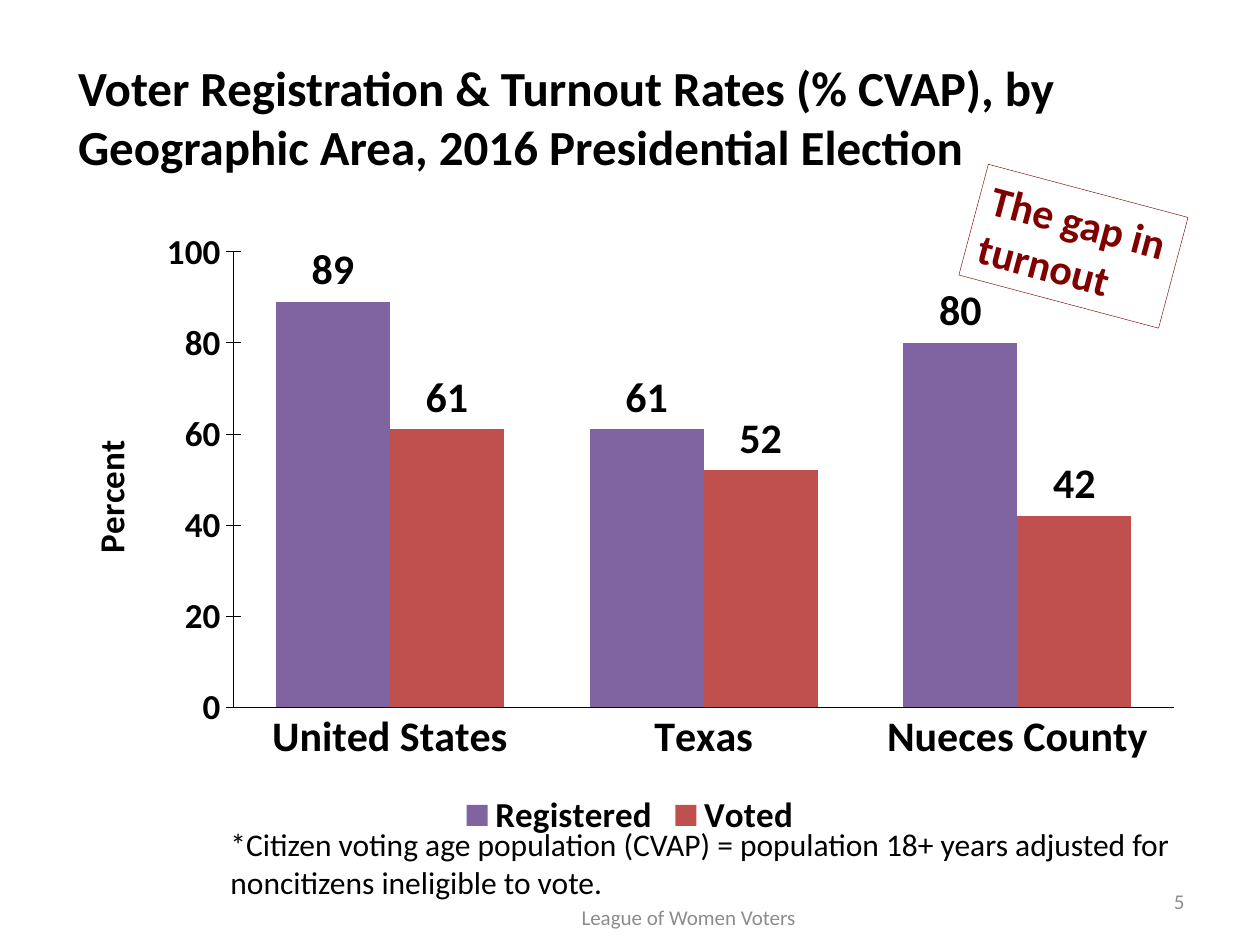
from dataclasses import dataclass
from typing import Any

from lxml.etree import SubElement
from pptx import Presentation
from pptx.chart.data import CategoryChartData
from pptx.dml.color import RGBColor
from pptx.enum.chart import (XL_CHART_TYPE, XL_LABEL_POSITION,
                             XL_LEGEND_POSITION, XL_TICK_MARK)
from pptx.enum.text import MSO_ANCHOR, MSO_AUTO_SIZE, PP_ALIGN
from pptx.oxml.ns import qn
from pptx.util import Pt

FACE = "Calibri"
BLACK, MAROON, GRAY = "000000", "800000", "8C8C8C"


@dataclass
class Box:
    text: str
    left: float
    top: float
    width: float
    height: float
    size: float
    color: str = BLACK
    bold: bool = False
    align: PP_ALIGN = PP_ALIGN.LEFT
    anchor: MSO_ANCHOR = MSO_ANCHOR.MIDDLE
    wrap: bool = True
    turn: float = 0
    edge: str = ""


@dataclass
class Bar:
    name: str
    rates: tuple[int, ...]
    color: str


TITLE = Box("Voter Registration & Turnout Rates (% CVAP), by Geographic Area, "
            "2016 Presidential Election", 37.4, 21.6, 646.6, 90, 28, bold=True)
NOTES = [
    Box("The gap in\nturnout", 554.4, 108, 118.1, 65.5, 24, MAROON, True,
        anchor=MSO_ANCHOR.TOP, wrap=False, turn=14.9, edge=MAROON),
    Box("5", 516.2, 500.4, 167.8, 28.8, 12, GRAY, align=PP_ALIGN.RIGHT),
    Box("League of Women Voters", 265, 509.8, 257, 28.8, 12, GRAY,
        align=PP_ALIGN.CENTER),
    Box("*Citizen voting age population (CVAP) = population 18+ years "
        "adjusted for\nnoncitizens ineligible to vote.",
        124.6, 468, 560.2, 51.1, 18, anchor=MSO_ANCHOR.TOP, wrap=False),
]
AREAS = ("United States", "Texas", "Nueces County")
BARS = [Bar("Registered", (89, 61, 80), "8064A2"),
        Bar("Voted", (61, 52, 42), "C0504D")]
PLOT = {"x": 0.15, "y": 0.05, "w": 0.83, "h": 0.73}


def paint(form: Any, color: str) -> None:
    form.rgb = RGBColor.from_string(color)


def style(font: Any, size: float, color: str = BLACK, bold: bool = True) -> None:
    font.name = FACE
    font.size = Pt(size)
    font.bold = bold
    paint(font.color, color)


def fill_box(shape: Any, box: Box) -> None:
    shape.left, shape.top = Pt(box.left), Pt(box.top)
    shape.width, shape.height = Pt(box.width), Pt(box.height)
    shape.rotation = box.turn
    frame = shape.text_frame
    frame.text = box.text
    frame.word_wrap = box.wrap
    frame.vertical_anchor = box.anchor
    frame.auto_size = MSO_AUTO_SIZE.NONE if box.wrap else MSO_AUTO_SIZE.SHAPE_TO_FIT_TEXT
    if box.edge:
        paint_line(shape.line, box.edge)
    for para in frame.paragraphs:
        para.alignment = box.align
        for run in para.runs:
            style(run.font, box.size, box.color, box.bold)


def paint_line(line: Any, color: str) -> None:
    line.width = Pt(0.25)
    line.fill.solid()
    paint(line.fill.fore_color, color)


def place_plot(chart: Any) -> None:
    area = chart._chartSpace.chart.plotArea
    for old in area.findall(qn("c:layout")):
        area.remove(old)
    layout = area.makeelement(qn("c:layout"))
    area.insert(0, layout)
    manual = SubElement(layout, qn("c:manualLayout"))
    parts = {"layoutTarget": "inner", "xMode": "edge", "yMode": "edge", **PLOT}
    for tag, val in parts.items():
        SubElement(manual, qn("c:" + tag)).set("val", str(val))


def draw_chart(slide: Any) -> None:
    data = CategoryChartData()
    data.categories = AREAS
    for bar in BARS:
        data.add_series(bar.name, bar.rates)
    chart = slide.shapes.add_chart(
        XL_CHART_TYPE.COLUMN_CLUSTERED, Pt(36), Pt(126), Pt(648), Pt(356.4), data).chart
    style(chart.font, 18, bold=False)
    chart.has_title = False
    chart.has_legend = True
    chart.legend.position = XL_LEGEND_POSITION.BOTTOM
    chart.legend.include_in_layout = False
    style(chart.legend.font, 20)

    for axis, size, tick in ((chart.category_axis, 24, XL_TICK_MARK.NONE),
                             (chart.value_axis, 20, XL_TICK_MARK.CROSS)):
        axis.has_major_gridlines = False
        axis.major_tick_mark = tick
        axis.minor_tick_mark = XL_TICK_MARK.NONE
        style(axis.tick_labels.font, size)
        paint_line(axis.format.line, BLACK)
    scale = chart.value_axis
    scale.minimum_scale, scale.maximum_scale, scale.major_unit = 0, 100, 20
    scale.tick_labels.number_format = "0"
    scale.tick_labels.number_format_is_linked = False
    frame = scale.axis_title.text_frame
    frame.text = "Percent"
    style(frame.paragraphs[0].runs[0].font, 20)

    plot = chart.plots[0]
    plot.gap_width = 75
    plot.overlap = 0
    plot.vary_by_categories = False
    for series, bar in zip(plot.series, BARS):
        series.format.fill.solid()
        paint(series.format.fill.fore_color, bar.color)
        labels = series.data_labels
        labels.show_value = True
        labels.number_format = "0"
        labels.number_format_is_linked = False
        labels.position = XL_LABEL_POSITION.OUTSIDE_END
        style(labels.font, 24)
    place_plot(chart)


def main() -> None:
    deck = Presentation()
    deck.slide_width, deck.slide_height = Pt(720), Pt(540)
    slide = deck.slides.add_slide(deck.slide_layouts[5])
    fill_box(slide.shapes.title, TITLE)
    draw_chart(slide)
    for note in NOTES:
        fill_box(slide.shapes.add_textbox(0, 0, 0, 0), note)
    deck.save("out.pptx")


if __name__ == "__main__":
    main()
